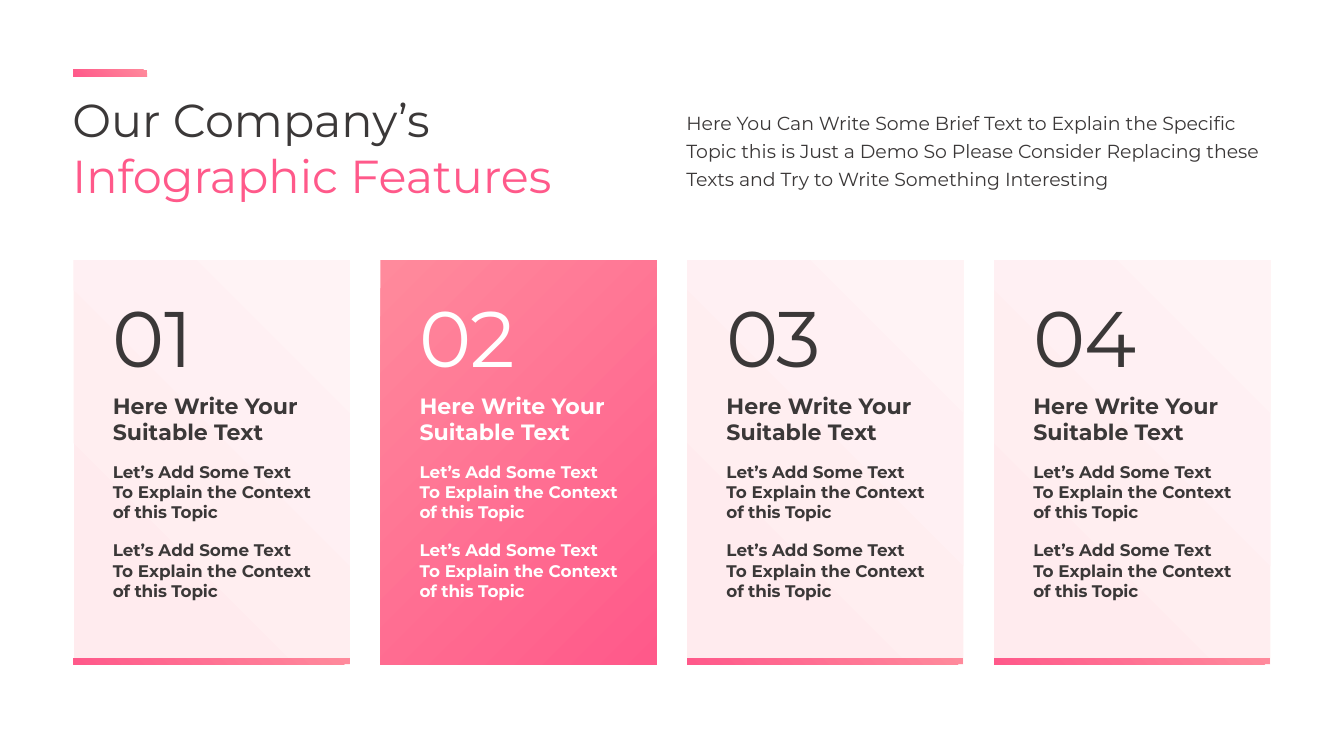
import pptx
import pptx.util
import pptx.dml.color
import pptx.enum.shapes
import pptx.enum.text
import pptx.oxml
from pptx.oxml.ns import nsdecls, qn
from pptx.util import Inches

RGBColor = pptx.dml.color.RGBColor
INK = RGBColor(0x3B, 0x38, 0x38)
WHITE = RGBColor(0xFF, 0xFF, 0xFF)
PINK = RGBColor(0xFF, 0x59, 0x8A)
CORAL = RGBColor(0xFF, 0x8A, 0x9C)
BLUSH = RGBColor(0xFF, 0xEB, 0xEE)
PALE = RGBColor(0xFF, 0xF3, 0xF5)

FONT = "Montserrat"
LEFT, CONTENT_WIDTH = 0.73, 11.87
CARD_TOP, CARD_WIDTH, CARD_HEIGHT = 2.58, 2.74, 4.01
BAR_HEIGHT = 0.06
NUMBER_TRACKING, LAST_LINE_TRACKING = -60, -10  # hundredths of a point

HEADING = ["Here Write Your", "Suitable Text"]
DETAIL = ["Let’s Add Some Text", "To Explain the Context", "of this Topic"]
INTRO = ("Here You Can Write Some Brief Text to Explain the Specific Topic "
         "this is Just a Demo So Please Consider Replacing these Texts and "
         "Try to Write Something Interesting")
# Number, width of its text box, whether the card is highlighted
CARDS = [("01", 1.05, False), ("02", 1.2, True),
         ("03", 1.2, False), ("04", 1.27, False)]


def set_gradient(fill, stops, angle=0):
    """Fill with two (position, colour) stops; angle is counter-clockwise."""
    fill.gradient()
    fill.gradient_angle = angle
    for stop, (position, color) in zip(fill.gradient_stops, stops):
        stop.position = position
        stop.color.rgb = color


def add_panel(page, box, stops, angle=0, corner=None):
    """Gradient rectangle; corner is the (x, y) percentage a radial fill starts from."""
    panel = page.shapes.add_shape(
        pptx.enum.shapes.MSO_SHAPE.RECTANGLE, *map(Inches, box))
    panel.shadow.inherit = False
    panel.line.fill.background()
    set_gradient(panel.fill, stops, angle)
    if corner:
        x, y = corner
        linear = panel._element.spPr.find(qn("a:gradFill")).find(qn("a:lin"))
        radial = pptx.oxml.parse_xml(
            f'<a:path {nsdecls("a")} path="circle"><a:fillToRect l="{x}000" '
            f't="{y}000" r="{100 - x}000" b="{100 - y}000"/></a:path>')
        linear.getparent().replace(linear, radial)


def add_accent_bar(page, box):
    add_panel(page, box, [(0, PINK), (1, CORAL)], corner=(0, 100))


def add_text(page, box, lines, size, color, bold=False, wrap=False):
    """Text box with one paragraph per line; returns its paragraphs."""
    frame = page.shapes.add_textbox(*map(Inches, box)).text_frame
    frame.word_wrap = wrap
    frame.auto_size = pptx.enum.text.MSO_AUTO_SIZE.SHAPE_TO_FIT_TEXT
    font_format = {"name": FONT, "size": pptx.util.Pt(size), "bold": bold}
    for index, line in enumerate(lines):
        para = frame.paragraphs[0] if index == 0 else frame.add_paragraph()
        span = para.add_run()
        span.text = line
        for name, value in font_format.items():
            setattr(span.font, name, value)
        span.font.color.rgb = color
    return frame.paragraphs


def set_tracking(para, tracking):
    para.runs[0].font._element.set("spc", str(tracking))


def add_header(page, left, top):
    # Accent bar and two-line title
    add_accent_bar(page, (left, top, 0.73, 0.07))
    title = add_text(page, (left - 0.11, top + 0.17, 5.37, 1.21),
                     ["Our Company’s", "Infographic Features"], 33, INK)
    set_gradient(title[1].runs[0].font.fill, [(0, PINK), (1, CORAL)], 180)

    # Introduction
    intro = add_text(page, (left + 5.98, top + 0.31, 6.12, 0.92),
                     [INTRO], 13.5, INK, wrap=True)
    intro[0].line_spacing = pptx.util.Pt(20)


def add_card(page, left, top, number, number_width, highlighted):
    # Background
    box = (left, top, CARD_WIDTH, CARD_HEIGHT)
    if highlighted:
        add_panel(page, box, [(0, PINK), (1, CORAL)], corner=(100, 100))
    else:
        add_panel(page, box, [(0.1, BLUSH), (1, PALE)], angle=45)
        add_accent_bar(page, (left, top + CARD_HEIGHT - BAR_HEIGHT,
                              CARD_WIDTH, BAR_HEIGHT))

    # Number, heading and two details
    color = WHITE if highlighted else INK
    text_left = left + 0.29
    figure = add_text(page, (text_left, top + 0.24, number_width, 1.05),
                      [number], 56.2, color)
    set_tracking(figure[0], NUMBER_TRACKING)
    add_text(page, (text_left, top + 1.26, 2.08, 0.63),
             HEADING, 15.8, color, bold=True)
    for offset in (1.95, 2.73):
        detail = add_text(page, (text_left, top + offset, 2.21, 0.71),
                          DETAIL, 12, color, bold=True)
        set_tracking(detail[-1], LAST_LINE_TRACKING)


def main():
    deck = pptx.Presentation()
    deck.slide_width, deck.slide_height = Inches(13.33), Inches(7.5)
    page = deck.slides.add_slide(deck.slide_layouts[6])
    add_header(page, LEFT, 0.69)
    pitch = (CONTENT_WIDTH - CARD_WIDTH) / (len(CARDS) - 1)
    for index, card in enumerate(CARDS):
        add_card(page, LEFT + index * pitch, CARD_TOP, *card)
    deck.save("out.pptx")


if __name__ == "__main__":
    main()
